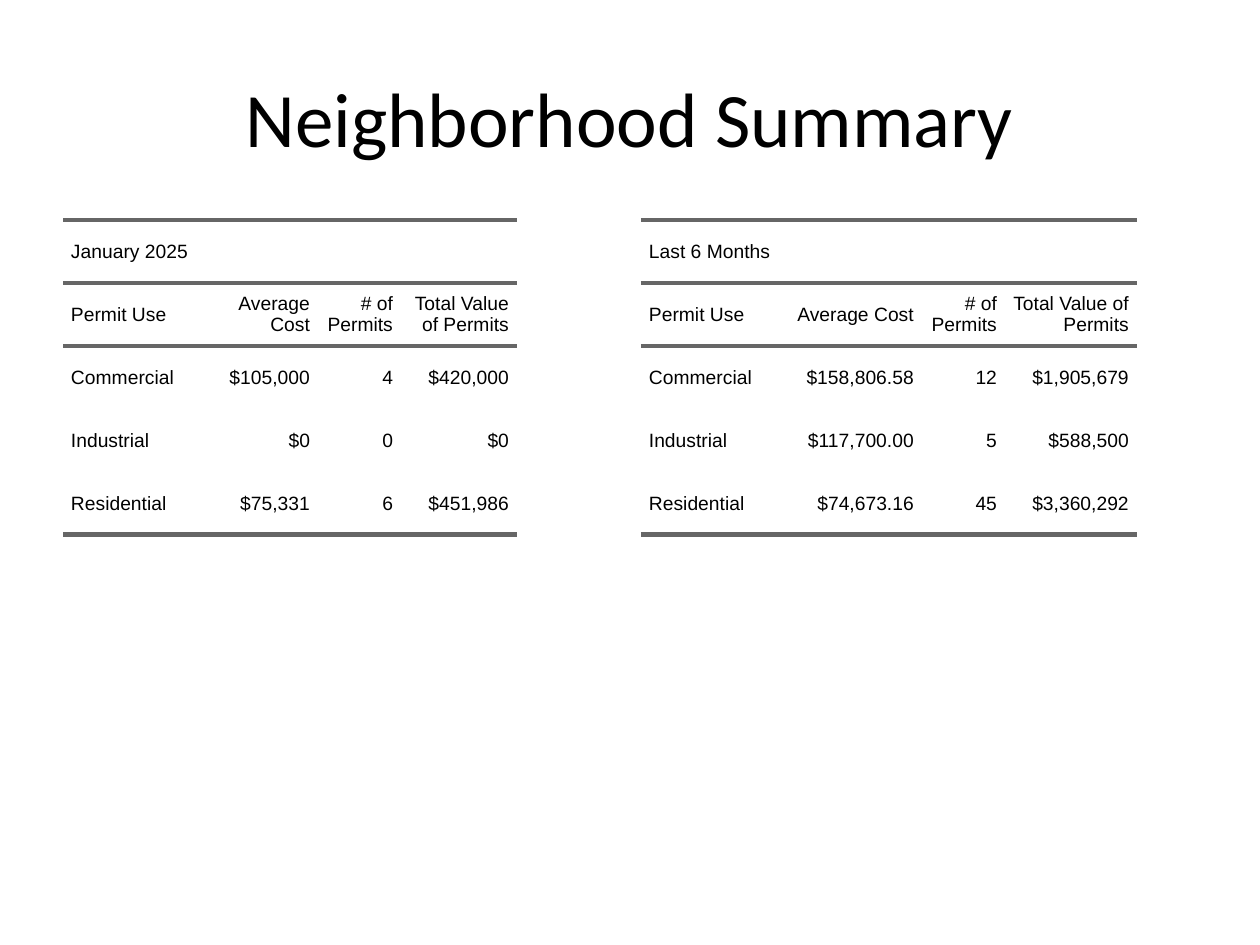
"""Build the neighborhood summary slide with two permit tables."""
import pptx
import pptx.dml.color
import pptx.enum.text
import pptx.oxml.ns
import pptx.util
from lxml import etree

SCALE = 914400 // 126
COLORS = {"text": "000000", "rule": "666666"}
TITLE = "Neighborhood Summary"
HEADINGS = ("Permit Use", "Average Cost", "# of Permits", "Total Value of Permits")
TABLES = [
    {
        "left": 63,
        "columns": (139, 116, 83, 116),
        "caption": "January 2025",
        "rows": [
            ("Commercial", "$105,000", "4", "$420,000"),
            ("Industrial", "$0", "0", "$0"),
            ("Residential", "$75,331", "6", "$451,986"),
        ],
    },
    {
        "left": 641,
        "columns": (139, 142, 83, 132),
        "caption": "Last 6 Months",
        "rows": [
            ("Commercial", "$158,806.58", "12", "$1,905,679"),
            ("Industrial", "$117,700.00", "5", "$588,500"),
            ("Residential", "$74,673.16", "45", "$3,360,292"),
        ],
    },
]
TABLE_TOP, TABLE_WIDTH, TABLE_HEIGHT, ROW_HEIGHT, PADDING = 220, 557, 624, 63, 8
ALIGN = pptx.enum.text.PP_ALIGN
MIDDLE = pptx.enum.text.MSO_ANCHOR.MIDDLE


def px(value):
    return pptx.util.Emu(value * SCALE)


def add_run(paragraph, text, font, size):
    run = paragraph.add_run()
    run.text = text
    run.font.name = font
    run.font.size = pptx.util.Pt(size)
    run.font.color.rgb = pptx.dml.color.RGBColor.from_string(COLORS["text"])


def set_borders(cell, ruled):
    qn = pptx.oxml.ns.qn
    properties = cell._tc.get_or_add_tcPr()
    for side in "LRTB":
        line = etree.SubElement(properties, qn(f"a:ln{side}"))
        if side in ruled:
            line.set("w", str(pptx.util.Pt(3)))
            fill = etree.SubElement(line, qn("a:solidFill"))
            etree.SubElement(fill, qn("a:srgbClr"), val=COLORS["rule"])
        else:
            etree.SubElement(line, qn("a:noFill"))


def fill_cell(cell, text, alignment, ruled):
    cell.margin_left = cell.margin_right = 0
    cell.margin_top = cell.margin_bottom = px(PADDING)
    cell.vertical_anchor = MIDDLE
    set_borders(cell, ruled)
    cell.fill.background()
    if not text:
        return
    paragraph = cell.text_frame.paragraphs[0]
    paragraph.alignment = alignment
    paragraph.space_before = paragraph.space_after = pptx.util.Pt(5)
    for side in ("marL", "marR"):
        paragraph._p.get_or_add_pPr().set(side, str(px(PADDING)))
    add_run(paragraph, text, "Arial", 11)


def add_permit_table(slide, left, columns, caption, rows):
    content = [(caption, "", "", ""), HEADINGS, *rows]
    shape = slide.shapes.add_table(
        len(content), len(columns), px(left), px(TABLE_TOP), px(TABLE_WIDTH), px(TABLE_HEIGHT)
    )
    table = shape.table
    table.first_row = table.horz_banding = False
    for column, width in zip(table.columns, columns):
        column.width = px(width)
    for index, texts in enumerate(content):
        table.rows[index].height = px(ROW_HEIGHT)
        ruled = "TB" if index < 2 else "T" if index == 2 else "B" if index == len(content) - 1 else ""
        for position, text in enumerate(texts):
            alignment = ALIGN.RIGHT if position else ALIGN.LEFT
            fill_cell(table.cell(index, position), text, alignment, ruled)
    table.cell(0, 0).merge(table.cell(0, len(columns) - 1))
    shape.width, shape.height = px(TABLE_WIDTH), px(TABLE_HEIGHT)


def add_title(slide):
    frame = slide.shapes.add_textbox(px(63), px(38), px(1134), px(157)).text_frame
    frame.word_wrap = True
    frame.vertical_anchor = MIDDLE
    paragraph = frame.paragraphs[0]
    paragraph.alignment = ALIGN.CENTER
    add_run(paragraph, TITLE, "Calibri", 44)


def main():
    presentation = pptx.Presentation()
    presentation.slide_width, presentation.slide_height = px(1260), px(945)
    slide = presentation.slides.add_slide(presentation.slide_layouts[6])
    for table in TABLES:
        add_permit_table(slide, **table)
    add_title(slide)
    presentation.save("out.pptx")


if __name__ == "__main__":
    main()
